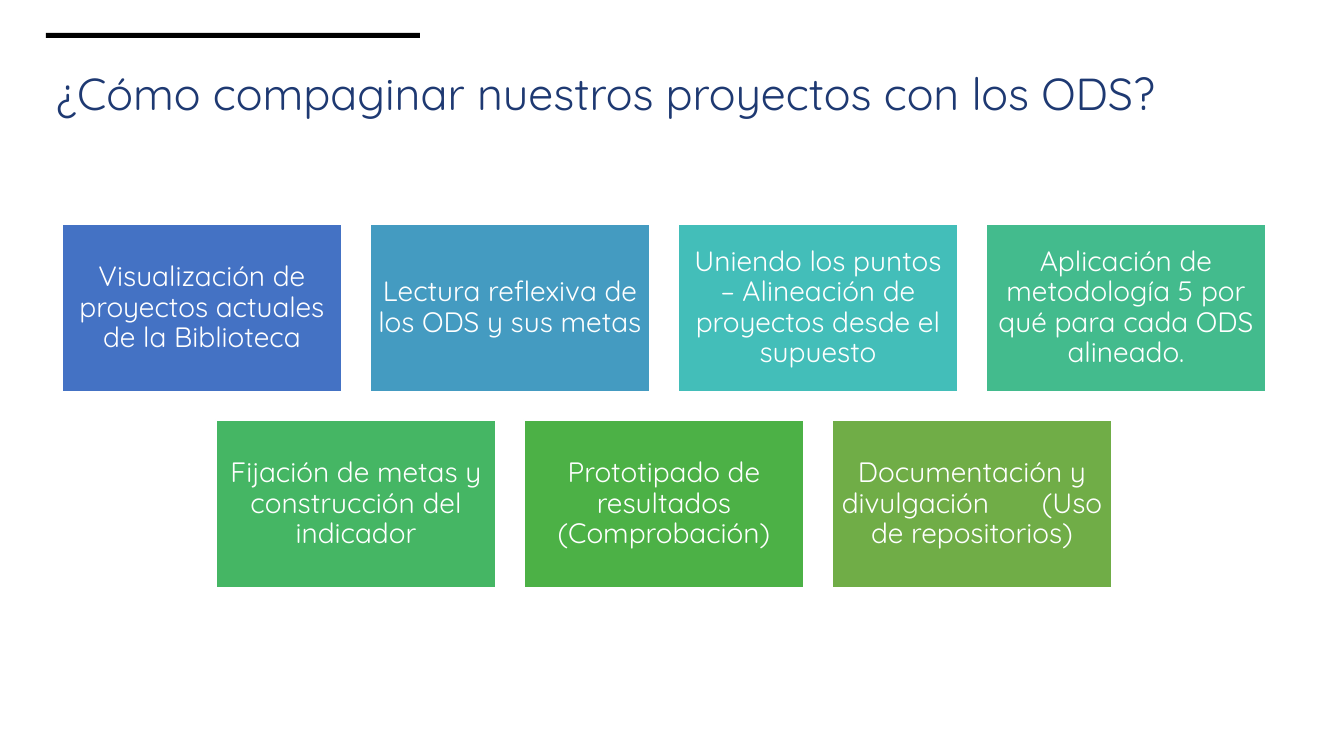
from lxml.etree import SubElement
from pptx import Presentation
from pptx.dml.color import RGBColor
from pptx.enum.shapes import MSO_SHAPE
from pptx.enum.text import MSO_ANCHOR, PP_ALIGN
from pptx.oxml.ns import qn
from pptx.util import Pt

SCALE = 914400 / 100.8
FONT = "Quicksand"
COLORS = {
    "bar": "000000", "title": "1E3972", "white": "FFFFFF",
    "blue": "4472C4", "sky": "449BC1", "teal": "43BEB9", "mint": "43BB8D",
    "green": "45B664", "leaf": "4CB146", "olive": "70AD47",
}


def px(n):
    return round(n * SCALE)


def color(name):
    return RGBColor.from_string(COLORS[name])


deck = Presentation()
deck.slide_width, deck.slide_height = px(1344), px(756)
slide = deck.slides.add_slide(deck.slide_layouts[6])
shapes = slide.shapes

# Bar above the title
bar = shapes.add_shape(MSO_SHAPE.RECTANGLE, px(46), px(33), px(374), px(5))
bar.shadow.inherit = False
bar.fill.solid()
bar.fill.fore_color.rgb = color("bar")
bar.line.fill.background()

# Title
title = shapes.add_textbox(px(46), px(33), px(1248), px(125)).text_frame
title.word_wrap = True
title.vertical_anchor = MSO_ANCHOR.MIDDLE
head = title.paragraphs[0]
head.text = "¿Cómo compaginar nuestros proyectos con los ODS?"
head.line_spacing = 0.9
head.font.name, head.font.size = FONT, Pt(32)
head.font.color.rgb = color("title")

# Steps, in centred rows
ROWS = [
    [("blue", "Visualización de proyectos actuales de la Biblioteca"),
     ("sky", "Lectura reflexiva de los ODS y sus metas"),
     ("teal", "Uniendo los puntos – Alineación de proyectos desde el supuesto"),
     ("mint", "Aplicación de metodología 5 por qué para cada ODS alineado.")],
    [("green", "Fijación de metas y construcción del indicador"),
     ("leaf", "Prototipado de resultados (Comprobación)"),
     ("olive", "Documentación y divulgación\t(Uso de repositorios)")],
]
WIDTH, HEIGHT, GAP = 280, 168, 28
TOP, MID, INSET, TAB = 224, 664, 8, 200

for row, steps in enumerate(ROWS):
    left = MID - (len(steps) * (WIDTH + GAP) - GAP) // 2
    top = TOP + row * (HEIGHT + GAP)
    for col, (name, text) in enumerate(steps):
        box = shapes.add_shape(MSO_SHAPE.RECTANGLE, px(left + col * (WIDTH + GAP)),
                               px(top), px(WIDTH), px(HEIGHT))
        box.shadow.inherit = False
        box.fill.solid()
        box.fill.fore_color.rgb = color(name)
        box.line.color.rgb = color("white")
        box.line.width = Pt(1)
        frame = box.text_frame
        frame.word_wrap = True
        frame.vertical_anchor = MSO_ANCHOR.MIDDLE
        frame.margin_left = frame.margin_right = px(INSET)
        frame.margin_top = frame.margin_bottom = px(INSET)
        para = frame.paragraphs[0]
        para.text = text
        para.alignment = PP_ALIGN.CENTER
        para.line_spacing = 0.9
        if "\t" in text:
            tabs = SubElement(para._p.get_or_add_pPr(), qn("a:tabLst"))
            SubElement(tabs, qn("a:tab"), pos=str(px(TAB)), algn="l")
        para.font.name, para.font.size = FONT, Pt(20)
        para.font.color.rgb = color("white")

deck.save("out.pptx")
